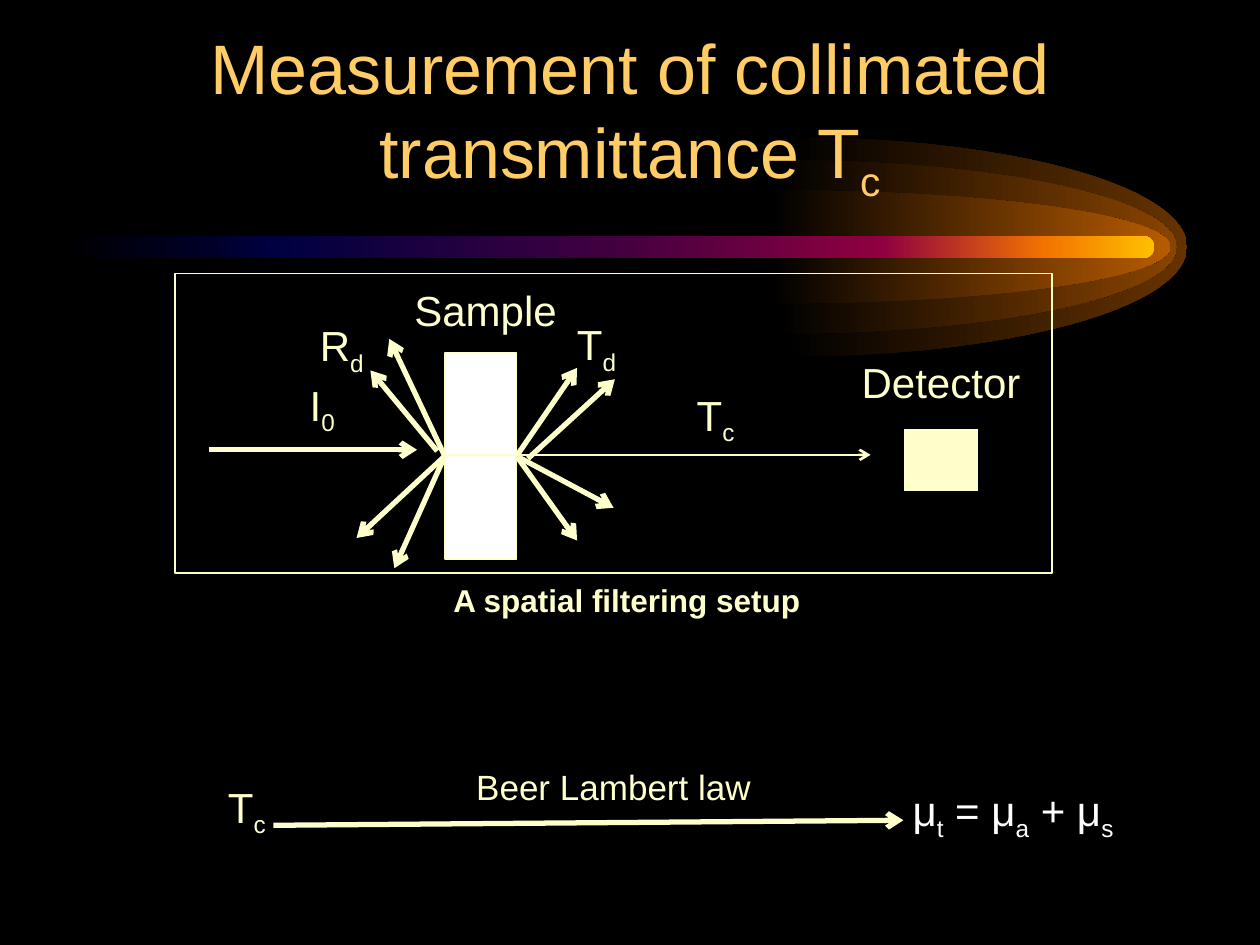
from dataclasses import dataclass

from lxml import etree
from pptx import Presentation
from pptx.dml.color import RGBColor
from pptx.enum import shapes, text
from pptx.oxml import ns
from pptx.util import Inches, Pt


@dataclass(frozen=True)
class Theme:
    font: str = "Arial"
    background: str = "000000"
    title: str = "FFCC66"
    ink: str = "FFFFCC"
    white: str = "FFFFFF"
    halos: tuple = ("663300", "894400", "B75B00")
    bar: tuple = ((0, "000000"), (20, "000040"), (50, "400040"),
                  (75, "8F0040"), (90, "F27300"), (100, "FFBF00"))
    title_size: int = 40
    label_size: int = 24
    law_size: int = 20
    caption_size: int = 18


THEME = Theme()
LEFT, CENTER = text.PP_ALIGN.LEFT, text.PP_ALIGN.CENTER


def color(value):
    return RGBColor.from_string(value)


def place(box, x, y):
    return Inches(box[0] + x), Inches(box[1] + y)


def fill_gradient(shape, stops):
    shape.shadow.inherit = False
    shape.line.fill.background()
    shape.fill.gradient()
    shape.fill.gradient_angle = 0
    stop_list = shape._element.spPr.find(".//" + ns.qn("a:gsLst"))
    for stop in list(stop_list):
        stop_list.remove(stop)
    for percent, value in stops:
        stop = etree.SubElement(stop_list, ns.qn("a:gs"), pos=str(percent * 1000))
        etree.SubElement(stop, ns.qn("a:srgbClr"), val=value)


def write(frame, content, size, ink, align, bold=False):
    paragraph = frame.paragraphs[0]
    paragraph.alignment = align
    font = paragraph.font
    font.name, font.size, font.bold = THEME.font, Pt(size), bold
    font.color.rgb = color(ink)
    first, *rest = content.split("_")
    paragraph.add_run().text = first
    for piece in rest:
        subscript = paragraph.add_run()
        subscript.text = piece[0]
        subscript._r.get_or_add_rPr().set("baseline", "-25000")
        if piece[1:]:
            paragraph.add_run().text = piece[1:]


def add_label(slide, box, content, x, y, width, align=LEFT,
              size=THEME.label_size, ink=THEME.ink, bold=False):
    label = slide.shapes.add_textbox(*place(box, x, y), Inches(width), Inches(size / 48))
    label.text_frame.word_wrap = True
    write(label.text_frame, content, size, ink, align, bold)


def add_rectangle(slide, box, x, y, width, height, fill, line, weight):
    shape = slide.shapes.add_shape(shapes.MSO_SHAPE.RECTANGLE, *place(box, x, y),
                                   Inches(width), Inches(height))
    shape.shadow.inherit = False
    if fill:
        shape.fill.solid()
        shape.fill.fore_color.rgb = color(fill)
    else:
        shape.fill.background()
    shape.line.color.rgb = color(line)
    shape.line.width = Pt(weight)


def add_arrow(slide, box, start, end, weight=3):
    arrow = slide.shapes.add_connector(shapes.MSO_CONNECTOR.STRAIGHT,
                                       *place(box, *start), *place(box, *end))
    arrow.line.color.rgb = color(THEME.ink)
    arrow.line.width = Pt(weight)
    etree.SubElement(arrow.line._get_or_add_ln(), ns.qn("a:tailEnd"), type="arrow")
    etree.SubElement(arrow._element.spPr, ns.qn("a:effectLst"))


def curve_segment(segment, controls):
    segment.tag = ns.qn("a:cubicBezTo")
    for index, (x, y) in enumerate(controls):
        point = etree.Element(ns.qn("a:pt"), x=str(int(x)), y=str(int(y)))
        segment.insert(index, point)


def add_halo(slide, box, center, radius, fill):
    middle, reach, tail = box[3] / 2, 3.13, 0.05
    builder = slide.shapes.build_freeform(*place(box, center, middle - radius))
    builder.add_line_segments([place(box, center + reach, middle),
                               place(box, center - tail, middle + radius),
                               place(box, center, middle)], close=True)
    halo = builder.convert_to_shape()
    upper, lower = list(halo._element.spPr.iter(ns.qn("a:lnTo")))[:2]
    bend = 0.55
    x, right = Inches(tail + bend * reach), Inches(tail + reach)
    curve_segment(upper, ((x, 0), (right, Inches(radius * (1 - bend)))))
    curve_segment(lower, ((right, Inches(radius * (1 + bend))), (x, Inches(2 * radius))))
    fill_gradient(halo, ((0, THEME.background), (100, fill)))


def add_comet(slide, box):
    for center, radius, fill in zip((5.79, 5.71, 5.66), (0.87, 0.69, 0.45), THEME.halos):
        add_halo(slide, box, center, radius, fill)
    bar = slide.shapes.add_shape(shapes.MSO_SHAPE.ROUNDED_RECTANGLE,
                                 *place(box, 0, box[3] / 2 - 0.09), Inches(8.66), Inches(0.18))
    bar.adjustments[0] = 0.5
    fill_gradient(bar, THEME.bar)


def set_title(slide, box):
    title = slide.shapes.title
    title.left, title.top, title.width, title.height = map(Inches, box)
    frame = title.text_frame
    frame.auto_size = text.MSO_AUTO_SIZE.NONE
    frame.vertical_anchor = text.MSO_ANCHOR.BOTTOM
    write(frame, "Measurement of collimated transmittance T_c",
          THEME.title_size, THEME.title, CENTER)
    slide.shapes._spTree.append(title._element)


def add_setup(slide, box):
    add_rectangle(slide, box, 0, 0, box[2], box[3], None, THEME.ink, 1)
    add_rectangle(slide, box, 2.14, 0.63, 0.57, 1.64, THEME.white, THEME.ink, 1)
    add_rectangle(slide, box, 5.77, 1.22, 0.62, 0.52, THEME.ink, THEME.background, 2)

    add_arrow(slide, box, (0.27, 1.4), (1.92, 1.4))
    add_arrow(slide, box, (2.15, 1.44), (5.52, 1.44), 1.5)
    scattered = {
        (2.71, 1.45): ((3.19, 0.75), (3.19, 2.12), (3.48, 1.86)),
        (2.8, 1.47): ((3.49, 0.84),),
        (2.08, 1.41): ((1.55, 0.77),),
        (2.14, 1.45): ((1.44, 2.1), (1.7, 0.52), (1.74, 2.34)),
    }
    for start, ends in scattered.items():
        for end in ends:
            add_arrow(slide, box, start, end)

    for label in (("I_0", 0.97, 0.79, 0.64), ("R_d", 1.05, 0.32, 0.71),
                  ("Sample", 1.8, 0.04, 1.42), ("T_d", 3.09, 0.31, 0.71),
                  ("T_c", 3.91, 0.87, 0.76, CENTER), ("Detector", 5.35, 0.61, 1.48)):
        add_label(slide, box, *label)
    add_label(slide, box, "A spatial filtering setup", 2, box[3] + 0.01, 3.17, CENTER,
              THEME.caption_size, bold=True)


def add_law(slide, box):
    add_label(slide, box, "T_c", 0, 0.12, 0.9, CENTER)
    add_label(slide, box, "Beer Lambert law", 2.06, 0, 2.6, CENTER, THEME.law_size)
    add_label(slide, box, "μ_t = μ_a + μ_s", 5.38, 0.15, 2.3, CENTER, ink=THEME.white)
    add_arrow(slide, box, (0.66, 0.52), (5.66, 0.48))


def main():
    presentation = Presentation()
    presentation.slide_width, presentation.slide_height = Inches(10), Inches(7.5)
    slide = presentation.slides.add_slide(presentation.slide_layouts[5])
    slide.background.fill.solid()
    slide.background.fill.fore_color.rgb = color(THEME.background)
    add_comet(slide, (0.5, 1.09, 8.92, 1.74))
    set_title(slide, (0, 0.3, 10, 1.37))
    add_setup(slide, (1.39, 2.17, 6.96, 2.38))
    add_law(slide, (1.51, 6.03, 7.68, 0.65))
    presentation.save("out.pptx")


if __name__ == "__main__":
    main()
